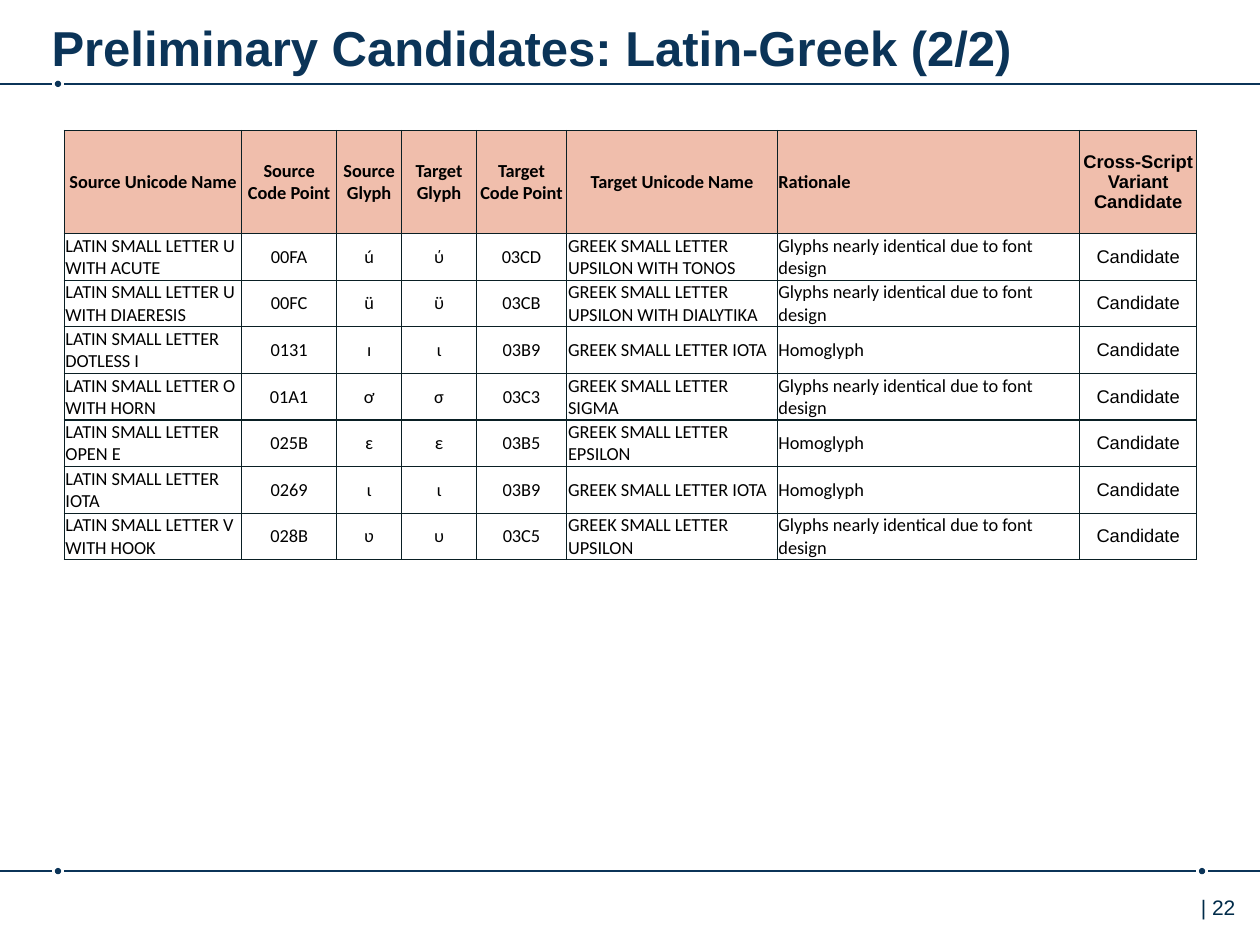
"""Build a slide listing the Latin-Greek cross-script variant candidates."""
from dataclasses import dataclass

from lxml import etree
from pptx import Presentation
from pptx.dml.color import RGBColor
from pptx.enum.shapes import MSO_CONNECTOR, MSO_SHAPE
from pptx.enum.text import MSO_ANCHOR, PP_ALIGN
from pptx.oxml.ns import qn
from pptx.util import Emu, Inches, Pt

STRAIGHT = MSO_CONNECTOR.STRAIGHT
OVAL = MSO_SHAPE.OVAL
MIDDLE, TOP = MSO_ANCHOR.MIDDLE, MSO_ANCHOR.TOP
CENTER, LEFT = PP_ALIGN.CENTER, PP_ALIGN.LEFT

SLIDE_WIDTH, SLIDE_HEIGHT = Inches(10), Inches(7.5)
NAVY, DARK_BLUE, BLACK = "0B3458", "002B49", "000000"
GRID_COLOR, HEADER_FILL = "0A1F24", "F0BEAC"
DOT_SIZE, DOT_GAP = 0.5, 0.5
HEADER_HEIGHT, ROW_HEIGHT = 10.93, 4.93
CELL_INSET = Inches(0.01)


@dataclass(frozen=True)
class Style:
    """Look of a run of text."""
    font: str
    size: float
    color: str
    bold: bool = False


@dataclass(frozen=True)
class Label:
    """Text with its place in percent of the slide and insets in inches."""
    text: str
    left: float
    top: float
    width: float
    height: float
    left_inset: float
    top_inset: float
    style: Style


@dataclass(frozen=True)
class Rule:
    """Full-width line broken by dots, in percent of the slide."""
    height: float
    dots: tuple[float, ...]


@dataclass(frozen=True)
class Column:
    """Table column with its width in percent of the slide."""
    heading: str
    width: float
    align: int = CENTER
    heading_align: int = CENTER
    font: str = "Calibri"


@dataclass(frozen=True)
class Candidate:
    """Pair of look-alike characters."""
    source_name: str
    source_code: str
    source_glyph: str
    target_glyph: str
    target_code: str
    target_name: str
    rationale: str

    def values(self) -> tuple[str, ...]:
        """Return the cell texts in column order."""
        return (f"LATIN SMALL LETTER {self.source_name}", self.source_code,
                self.source_glyph, self.target_glyph, self.target_code,
                f"GREEK SMALL LETTER {self.target_name}", self.rationale, "Candidate")


NEAR = "Glyphs nearly identical due to font design"
SAME = "Homoglyph"
COLUMNS = (
    Column("Source Unicode Name", 14.1, LEFT),
    Column("Source Code Point", 7.5),
    Column("Source Glyph", 5.2),
    Column("Target Glyph", 5.9),
    Column("Target Code Point", 7.2),
    Column("Target Unicode Name", 16.7, LEFT),
    Column("Rationale", 24, LEFT, LEFT),
    Column("Cross-Script Variant Candidate", 9.3, font="Arial"),
)
CANDIDATES = (
    Candidate("U WITH ACUTE", "00FA", "ú", "ύ", "03CD", "UPSILON WITH TONOS", NEAR),
    Candidate("U WITH DIAERESIS", "00FC", "ü", "ϋ", "03CB", "UPSILON WITH DIALYTIKA", NEAR),
    Candidate("DOTLESS I", "0131", "ı", "ι", "03B9", "IOTA", SAME),
    Candidate("O WITH HORN", "01A1", "ơ", "σ", "03C3", "SIGMA", NEAR),
    Candidate("OPEN E", "025B", "ɛ", "ε", "03B5", "EPSILON", SAME),
    Candidate("IOTA", "0269", "ɩ", "ι", "03B9", "IOTA", SAME),
    Candidate("V WITH HOOK", "028B", "ʋ", "υ", "03C5", "UPSILON", NEAR),
)
RULES = (Rule(8.88, (4.6,)), Rule(92.18, (4.6, 95.4)))
LABELS = (
    Label("Preliminary Candidates: Latin-Greek (2/2)", 4.1, 0.67, 87.6, 6.53, 0, 0.09,
          Style("Arial", 28, NAVY, True)),
    Label("| 22", 92.9, 94, 7.1, 5.33, 0.24, 0.05, Style("Arial", 12, DARK_BLUE)),
)


def across(percent: float) -> Emu:
    """Convert a share of the slide's width to a length."""
    return Emu(round(SLIDE_WIDTH * percent / 100))


def down(percent: float) -> Emu:
    """Convert a share of the slide's height to a length."""
    return Emu(round(SLIDE_HEIGHT * percent / 100))


def rgb(color: str) -> RGBColor:
    """Convert a hex string to a colour."""
    return RGBColor.from_string(color)


def write(frame, text: str, style: Style, align: int = LEFT) -> None:
    """Add one styled run to the first paragraph of a text frame."""
    paragraph = frame.paragraphs[0]
    paragraph.alignment = align
    run = paragraph.add_run()
    run.text = text
    run.font.name, run.font.size = style.font, Pt(style.size)
    run.font.bold = style.bold
    run.font.color.rgb = rgb(style.color)


def draw_label(slide, label: Label) -> None:
    """Draw a text box."""
    box = slide.shapes.add_textbox(across(label.left), down(label.top),
                                   across(label.width), down(label.height))
    frame = box.text_frame
    frame.word_wrap = True
    frame.vertical_anchor = TOP
    frame.margin_left, frame.margin_right = Inches(label.left_inset), 0
    frame.margin_top, frame.margin_bottom = Inches(label.top_inset), Inches(0.05)
    write(frame, label.text, label.style)


def draw_rule(slide, rule: Rule) -> None:
    """Draw the line segments and the dots between them."""
    y = down(rule.height)
    edges = [0, *(dot + side for dot in rule.dots for side in (-DOT_GAP, DOT_GAP)), 100]
    for start, end in zip(edges[::2], edges[1::2]):
        segment = slide.shapes.add_connector(STRAIGHT, across(start), y, across(end), y)
        segment.line.color.rgb = rgb(NAVY)
        segment.line.width = Pt(1)
        etree.SubElement(segment._element.spPr, qn("a:effectLst"))
    size = across(DOT_SIZE)
    for center in rule.dots:
        dot = slide.shapes.add_shape(OVAL, across(center) - size // 2, y - size // 2, size, size)
        dot.shadow.inherit = False
        dot.fill.solid()
        dot.fill.fore_color.rgb = rgb(NAVY)
        dot.line.fill.background()


def add_borders(cell) -> None:
    """Outline the four sides of a cell."""
    properties = cell._tc.get_or_add_tcPr()
    for position, side in enumerate(("a:lnL", "a:lnR", "a:lnT", "a:lnB")):
        border = etree.Element(qn(side), w=str(Pt(0.75)))
        properties.insert(position, border)
        fill = etree.SubElement(border, qn("a:solidFill"))
        etree.SubElement(fill, qn("a:srgbClr"), val=GRID_COLOR)


def fill_cell(cell, text: str, column: Column, heading: bool) -> None:
    """Write and format one table cell."""
    cell.vertical_anchor = MIDDLE
    cell.margin_left = cell.margin_right = CELL_INSET
    cell.margin_top = cell.margin_bottom = CELL_INSET
    if heading:
        cell.fill.solid()
        cell.fill.fore_color.rgb = rgb(HEADER_FILL)
    else:
        cell.fill.background()
    add_borders(cell)
    align = column.heading_align if heading else column.align
    write(cell.text_frame, text, Style(column.font, 10.5, BLACK, heading), align)


def draw_table(slide) -> None:
    """Draw the candidate table."""
    rows = [tuple(column.heading for column in COLUMNS), *(c.values() for c in CANDIDATES)]
    width = across(sum(column.width for column in COLUMNS))
    height = down(HEADER_HEIGHT + ROW_HEIGHT * len(CANDIDATES))
    table = slide.shapes.add_table(len(rows), len(COLUMNS), across(5.1), down(13.8),
                                   width, height).table
    table.first_row = table.horz_banding = False
    for index, column in enumerate(COLUMNS):
        table.columns[index].width = across(column.width)
    for row, texts in enumerate(rows):
        table.rows[row].height = down(ROW_HEIGHT if row else HEADER_HEIGHT)
        for index, (text, column) in enumerate(zip(texts, COLUMNS)):
            fill_cell(table.cell(row, index), text, column, row == 0)


def main() -> None:
    """Build and save the slide."""
    deck = Presentation()
    deck.slide_width, deck.slide_height = SLIDE_WIDTH, SLIDE_HEIGHT
    slide = deck.slides.add_slide(deck.slide_layouts[6])
    for rule in RULES:
        draw_rule(slide, rule)
    for label in LABELS:
        draw_label(slide, label)
    draw_table(slide)
    deck.save("out.pptx")


if __name__ == "__main__":
    main()
